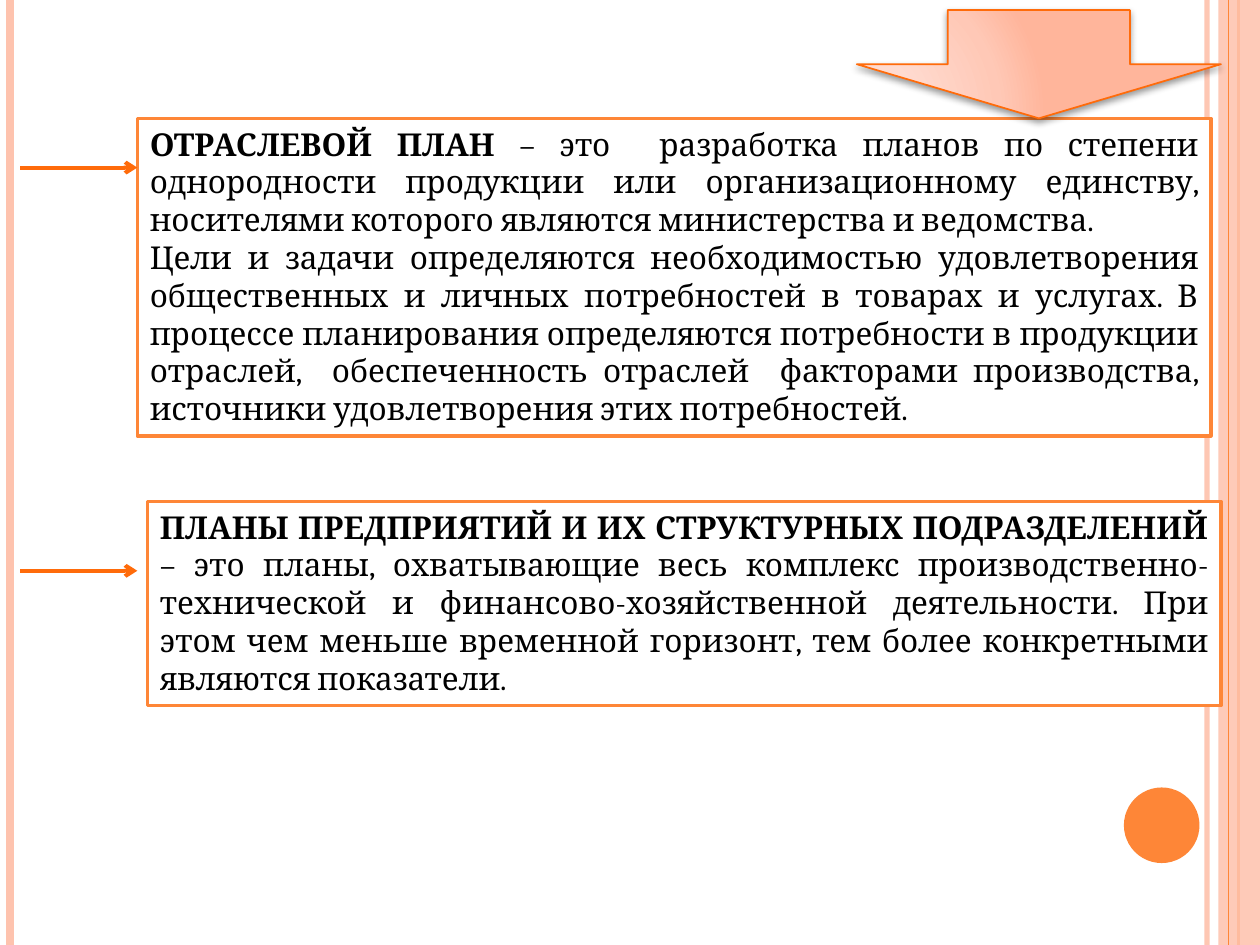
from dataclasses import dataclass
from lxml import etree
from pptx import Presentation
from pptx import util as u
from pptx.dml.color import RGBColor
from pptx.enum import shapes, text
from pptx.oxml import parse_xml
from pptx.oxml.ns import nsdecls, qn

CELL = u.Inches(0.1)
COLS, ROWS = 100, 75


@dataclass(frozen=True)
class Theme:
    pale: str = "FEC3AE"
    main: str = "FE8637"
    deep: str = "FF6B0A"
    paper: str = "FFFFFF"
    ink: str = "000000"
    glow: tuple = ((0, "FFDED5"), (30, "FFDBD0"), (75, "FFC8B6"), (100, "FFB59B"))
    font: str = "Cambria"
    size: int = 18


@dataclass(frozen=True)
class Box:
    x: float
    y: float
    w: float
    h: float

    def sub(self, x, y, w, h):
        return Box(self.x + x, self.y + y, w, h)

    def emu(self):
        return [round(n * CELL) for n in (self.x, self.y, self.w, self.h)]


THEME = Theme()
KIND = shapes.MSO_SHAPE


def fade(node, share):
    color = node.find(".//" + qn("a:srgbClr"))
    etree.SubElement(color, qn("a:alpha")).set("val", str(share * 1000))


def stroke(line, color, width):
    line.color.rgb = RGBColor.from_string(color)
    line.width = u.Pt(width)


def shape(slide, kind, box, fill=None, edge=None, width=1):
    item = slide.shapes.add_shape(kind, *box.emu())
    item.shadow.inherit = False
    if fill:
        item.fill.solid()
        item.fill.fore_color.rgb = RGBColor.from_string(fill)
    if edge:
        stroke(item.line, edge, width)
    else:
        item.line.fill.background()
    return item


def rule(slide, box, color, width, head=False, share=None):
    x, y, w, h = box.emu()
    item = slide.shapes.add_connector(shapes.MSO_CONNECTOR.STRAIGHT, x, y, x + w, y + h)
    stroke(item.line, color, width)
    props = item._element.spPr
    line = props.find(qn("a:ln"))
    if share:
        fade(line, share)
    if head:
        etree.SubElement(line, qn("a:tailEnd")).set("type", "arrow")
    etree.SubElement(props, qn("a:effectLst"))


def frame(slide, box):
    t = THEME
    for x, color, width, share in (
        (95.8, t.pale, 3, 93),
        (0.8, t.pale, 4.5, None),
        (98.3, t.main, 1.5, None),
    ):
        rule(slide, box.sub(x, 0, 0, box.h), color, width, share=share)
    band = shape(slide, KIND.RECTANGLE, box.sub(96.7, 0, 3.3, box.h), t.pale)
    fade(band._element.spPr.find(qn("a:solidFill")), 87)
    rule(slide, box.sub(97.5, 0, 0, box.h), t.main, 0.75)
    shape(slide, KIND.OVAL, box.sub(89.2, 62.5, 6, 6), t.main)


def write(item, paras):
    body = item.text_frame
    body.word_wrap = True
    body.auto_size = text.MSO_AUTO_SIZE.SHAPE_TO_FIT_TEXT
    body.vertical_anchor = text.MSO_ANCHOR.TOP
    for i, runs in enumerate(paras):
        para = body.add_paragraph() if i else body.paragraphs[0]
        para.alignment = text.PP_ALIGN.JUSTIFY
        for words, bold in runs:
            run = para.add_run()
            run.text = words
            run.font.name = THEME.font
            run.font.size = u.Pt(THEME.size)
            run.font.bold = bold
            run.font.color.rgb = RGBColor.from_string(THEME.ink)


def plan(slide, box, inset, drop, paras):
    t = THEME
    panel = box.sub(inset, 0, box.w - inset, box.h)
    write(shape(slide, KIND.RECTANGLE, panel, t.paper, t.main, 2), paras)
    rule(slide, box.sub(0, drop, 9.3, 0), t.deep, 2.25, head=True)


def pointer(slide, box):
    item = shape(slide, KIND.DOWN_ARROW, box, edge=THEME.deep)
    stops = "".join(
        f'<a:gs pos="{pos * 1000}"><a:srgbClr val="{color}"/></a:gs>'
        for pos, color in THEME.glow
    )
    props = item._element.spPr
    props.find(qn("a:prstGeom")).addnext(parse_xml(
        f'<a:gradFill {nsdecls("a")} rotWithShape="1"><a:gsLst>{stops}</a:gsLst>'
        '<a:path path="circle"><a:fillToRect l="5000" t="100000" r="120000" b="10000"/>'
        '</a:path></a:gradFill>'
    ))
    props.find(qn("a:effectLst")).append(parse_xml(
        f'<a:outerShdw {nsdecls("a")} blurRad="{u.Pt(4)}" dist="{u.Pt(2)}" '
        f'dir="5400000" rotWithShape="0"><a:srgbClr val="{THEME.ink}">'
        '<a:alpha val="40000"/></a:srgbClr></a:outerShdw>'
    ))


SECTOR = (
    (
        ("ОТРАСЛЕВОЙ ПЛАН ", True),
        ("– это  разработка планов по степени однородности продукции или "
         "организационному единству, носителями которого являются министерства "
         "и ведомства.", False),
    ),
    (
        ("Цели и задачи определяются необходимостью удовлетворения общественных "
         "и личных потребностей в товарах и услугах. В процессе планирования "
         "определяются потребности в продукции отраслей,  обеспеченность отраслей  "
         "факторами производства, источники удовлетворения этих потребностей.", False),
    ),
)
FIRM = (
    (
        ("ПЛАНЫ ПРЕДПРИЯТИЙ И ИХ СТРУКТУРНЫХ ПОДРАЗДЕЛЕНИЙ ", True),
        ("– это планы, охватывающие весь комплекс производственно-технической и "
         "финансово-хозяйственной деятельности. При этом чем меньше временной "
         "горизонт, тем более конкретными являются показатели.", False),
    ),
)


def main():
    deck = Presentation()
    deck.slide_width, deck.slide_height = COLS * CELL, ROWS * CELL
    slide = deck.slides.add_slide(deck.slide_layouts[6])
    page = Box(0, 0, COLS, ROWS)
    frame(slide, page)
    plan(slide, page.sub(1.6, 9.4, 94.5, 25.2), 9.3, 3.9, SECTOR)
    pointer(slide, page.sub(68, 0.8, 28.9, 8.6))
    plan(slide, page.sub(1.6, 39.8, 95.3, 16.2), 10.1, 5.5, FIRM)
    deck.save("out.pptx")


if __name__ == "__main__":
    main()
